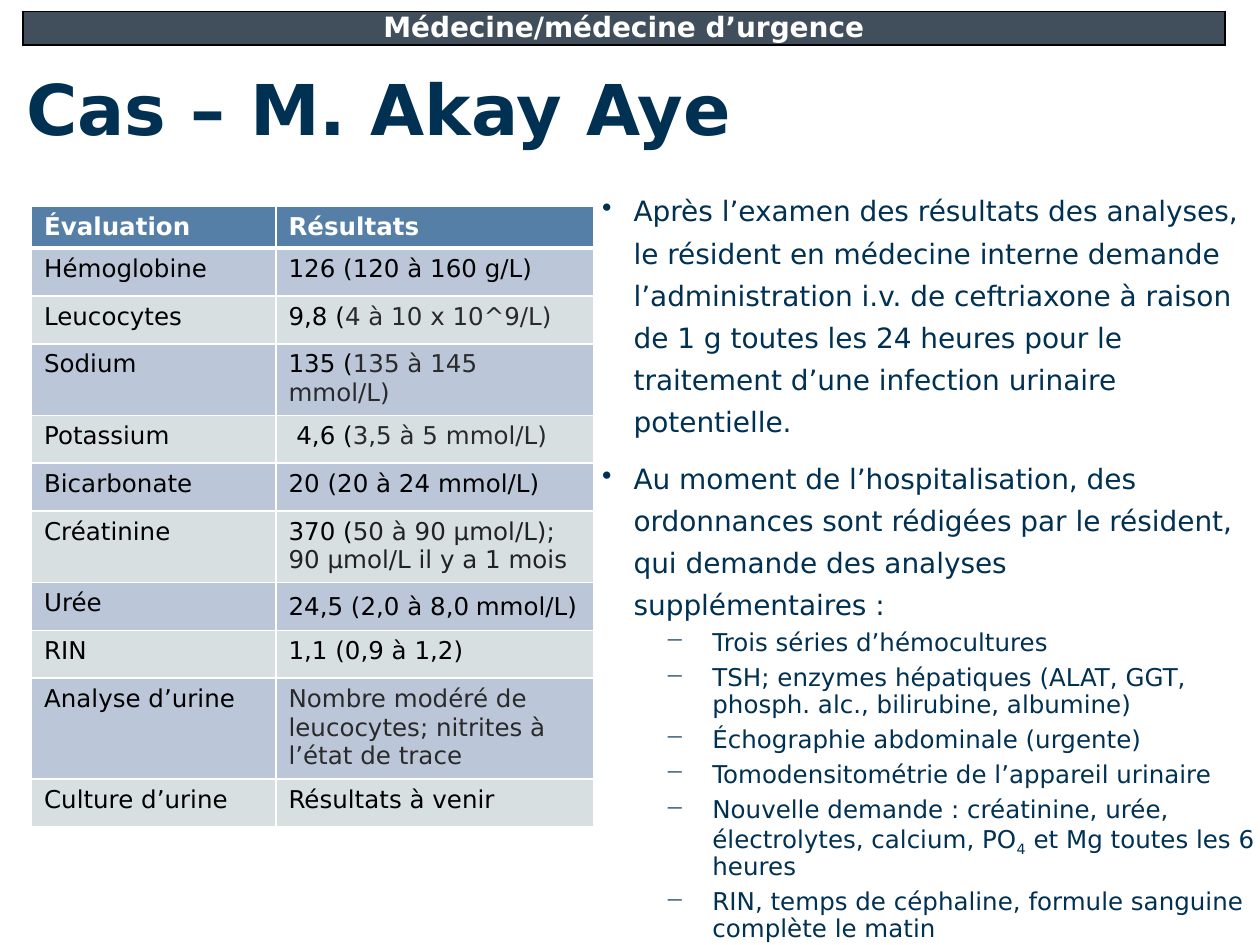
from dataclasses import dataclass

from lxml import etree
from pptx import Presentation
from pptx.dml.color import RGBColor
from pptx.enum import text
from pptx.oxml import ns
from pptx.util import Pt


@dataclass(frozen=True)
class Theme:
    face: str = "DejaVu Sans"
    spacer_face: str = "Calibri"
    navy: str = "003152"
    white: str = "FFFFFF"
    black: str = "000000"
    range_grey: str = "2A2A2A"
    creatinine_grey: str = "222222"
    banner: str = "414F5C"
    header: str = "557FA6"
    bands: tuple = ("BBC7D9", "D8DFE0")
    title_size: int = 40
    body_size: int = 16
    small_size: int = 14


THEME = Theme()
GREY = {"color": THEME.range_grey}

RESULTS = [
    ("Hémoglobine", [("126 (120 à 160 g/L)", {})]),
    ("Leucocytes", [("9,8 (", {}), ("4 à 10 x 10^9/L)", GREY)]),
    ("Sodium", [("135 (", {}), ("135 à 145 mmol/L)", GREY)]),
    ("Potassium", [(" 4,6 (", {}), ("3,5 à 5 mmol/L)", GREY)]),
    ("Bicarbonate", [("20 (20 à 24 mmol/L)", {})]),
    ("Créatinine", [("370 (", {}), ("50 à 90 µmol/L); 90 µmol/L il y a 1 mois",
                                    {"color": THEME.creatinine_grey})]),
    ("Urée", [("24,5 (2,0 à 8,0", {}),
              (" ", {"size": THEME.body_size, "face": THEME.spacer_face}),
              ("mmol/L)", {})]),
    ("RIN", [("1,1 (0,9 à 1,2)", {})]),
    ("Analyse d’urine", [("Nombre modéré de leucocytes; nitrites à l’état de trace", GREY)]),
    ("Culture d’urine", [("Résultats à venir", {})]),
]

FINDINGS = [
    "Après l’examen des résultats des analyses, le résident en médecine interne demande "
    "l’administration i.v. de ceftriaxone à raison de 1 g toutes les 24 heures pour le "
    "traitement d’une infection urinaire potentielle.",
    "Au moment de l’hospitalisation, des ordonnances sont rédigées par le résident, "
    "qui demande des analyses supplémentaires :",
]

ORDERS = [
    [("Trois séries d’hémocultures", {})],
    [("TSH; enzymes hépatiques (ALAT, GGT, phosph. alc., bilirubine, albumine)", {})],
    [("Échographie abdominale (urgente)", {})],
    [("Tomodensitométrie de l’appareil urinaire", {})],
    [("Nouvelle demande : créatinine, urée, électrolytes, calcium, PO", {}),
     ("4", {"baseline": -25000}),
     (" et Mg toutes les 6 heures", {})],
    [("RIN, temps de céphaline, formule sanguine complète le matin", {})],
]


def add_text(paragraph, words, size=THEME.small_size, color=THEME.black,
             bold=False, face=THEME.face, baseline=None):
    run = paragraph.add_run()
    run.text = words
    run.font.size = Pt(size)
    run.font.name = face
    run.font.bold = bold
    run.font.color.rgb = RGBColor.from_string(color)
    if baseline is not None:
        run.font._element.set("baseline", str(baseline))


def set_bullet(paragraph, char, margin, hanging):
    properties = paragraph._p.get_or_add_pPr()
    properties.set("marL", str(Pt(margin)))
    properties.set("indent", str(-Pt(hanging)))
    etree.SubElement(properties, ns.qn("a:buChar")).set("char", char)


def style_cell(cell, fill, border, bottom_width=1):
    properties = cell._tc.get_or_add_tcPr()
    for side in "LRTB":
        line = etree.SubElement(properties, ns.qn(f"a:ln{side}"))
        line.set("w", str(Pt(bottom_width if side == "B" else 1)))
        solid = etree.SubElement(line, ns.qn("a:solidFill"))
        etree.SubElement(solid, ns.qn("a:srgbClr")).set("val", border)
    cell.fill.solid()
    cell.fill.fore_color.rgb = RGBColor.from_string(fill)


def add_grid(slide, left, top, widths, heights):
    """Add a table without style bands, sized by its columns and rows."""
    grid = slide.shapes.add_table(len(heights), len(widths), Pt(left), Pt(top),
                                  Pt(sum(widths)), Pt(sum(heights))).table
    grid.first_row = grid.horz_banding = False
    for column, width in zip(grid.columns, widths):
        column.width = Pt(width)
    for row, height in zip(grid.rows, heights):
        row.height = Pt(height)
    return grid


def add_banner(slide, left, top, width, height):
    cell = add_grid(slide, left, top, [width], [height]).cell(0, 0)
    cell.margin_left = cell.margin_right = Pt(5)
    cell.margin_top = cell.margin_bottom = 0
    style_cell(cell, THEME.banner, THEME.black)
    paragraph = cell.text_frame.paragraphs[0]
    paragraph.alignment = text.PP_ALIGN.CENTER
    add_text(paragraph, "Médecine/médecine d’urgence", size=THEME.body_size,
             color=THEME.white, bold=True)


def add_title(slide, left, top, width, height):
    frame = slide.shapes.add_textbox(Pt(left), Pt(top), Pt(width), Pt(height)).text_frame
    frame.word_wrap = True
    frame.vertical_anchor = text.MSO_ANCHOR.MIDDLE
    paragraph = frame.paragraphs[0]
    paragraph.line_spacing = 0.9
    add_text(paragraph, "Cas – M. Akay Aye", size=THEME.title_size,
             color=THEME.navy, bold=True)


def add_results(slide, left, top, widths, header_height, row_height):
    heights = [header_height] + [row_height] * len(RESULTS)
    grid = add_grid(slide, left, top, widths, heights)
    for column, heading in enumerate(("Évaluation", "Résultats ")):
        cell = grid.cell(0, column)
        style_cell(cell, THEME.header, THEME.white, bottom_width=3)
        add_text(cell.text_frame.paragraphs[0], heading, color=THEME.white, bold=True)
    for row, (test, result) in enumerate(RESULTS, 1):
        for column, parts in enumerate(([(test, {})], result)):
            cell = grid.cell(row, column)
            style_cell(cell, THEME.bands[(row - 1) % 2], THEME.white,)
            for words, style in parts:
                add_text(cell.text_frame.paragraphs[0], words, **style)
    for column in range(len(widths)):
        top_line = grid.cell(1, column)._tc.tcPr.find(ns.qn("a:lnT"))
        top_line.set("w", str(Pt(3)))


def add_plan(slide, left, top, width, height):
    """Place the findings, then the orders one level below them."""
    frame = slide.shapes.add_textbox(Pt(left), Pt(top), Pt(width), Pt(height)).text_frame
    frame.word_wrap = True
    finding = {"level": 1, "char": "•", "margin": 54, "hanging": 18,
               "spacing": Pt(24), "before": 9, "size": THEME.body_size}
    order = {"level": 2, "char": "−", "margin": 99, "hanging": 27,
             "spacing": 0.9, "before": 5, "size": THEME.small_size}
    items = [([(words, {})], finding) for words in FINDINGS]
    items += [(parts, order) for parts in ORDERS]
    for index, (parts, kind) in enumerate(items):
        paragraph = frame.add_paragraph() if index else frame.paragraphs[0]
        paragraph.level = kind["level"]
        set_bullet(paragraph, kind["char"], kind["margin"], kind["hanging"])
        paragraph.line_spacing = kind["spacing"]
        paragraph.space_before = Pt(kind["before"] if index else 0)
        paragraph.font.size = Pt(kind["size"])
        paragraph.font.color.rgb = RGBColor.from_string(THEME.navy)
        for words, style in parts:
            add_text(paragraph, words, size=kind["size"], color=THEME.navy, **style)


def main():
    deck = Presentation()
    deck.slide_width, deck.slide_height = Pt(720), Pt(540)
    slide = deck.slides.add_slide(deck.slide_layouts[6])
    add_title(slide, left=8, top=12, width=621, height=104.5)
    add_plan(slide, left=301, top=102.5, width=426, height=430.5)
    add_results(slide, left=18, top=117.7, widths=[139.7, 181.7],
                header_height=23, row_height=27.36)
    add_banner(slide, left=13, top=6.5, width=687, height=19.2)
    deck.save("out.pptx")


if __name__ == "__main__":
    main()
